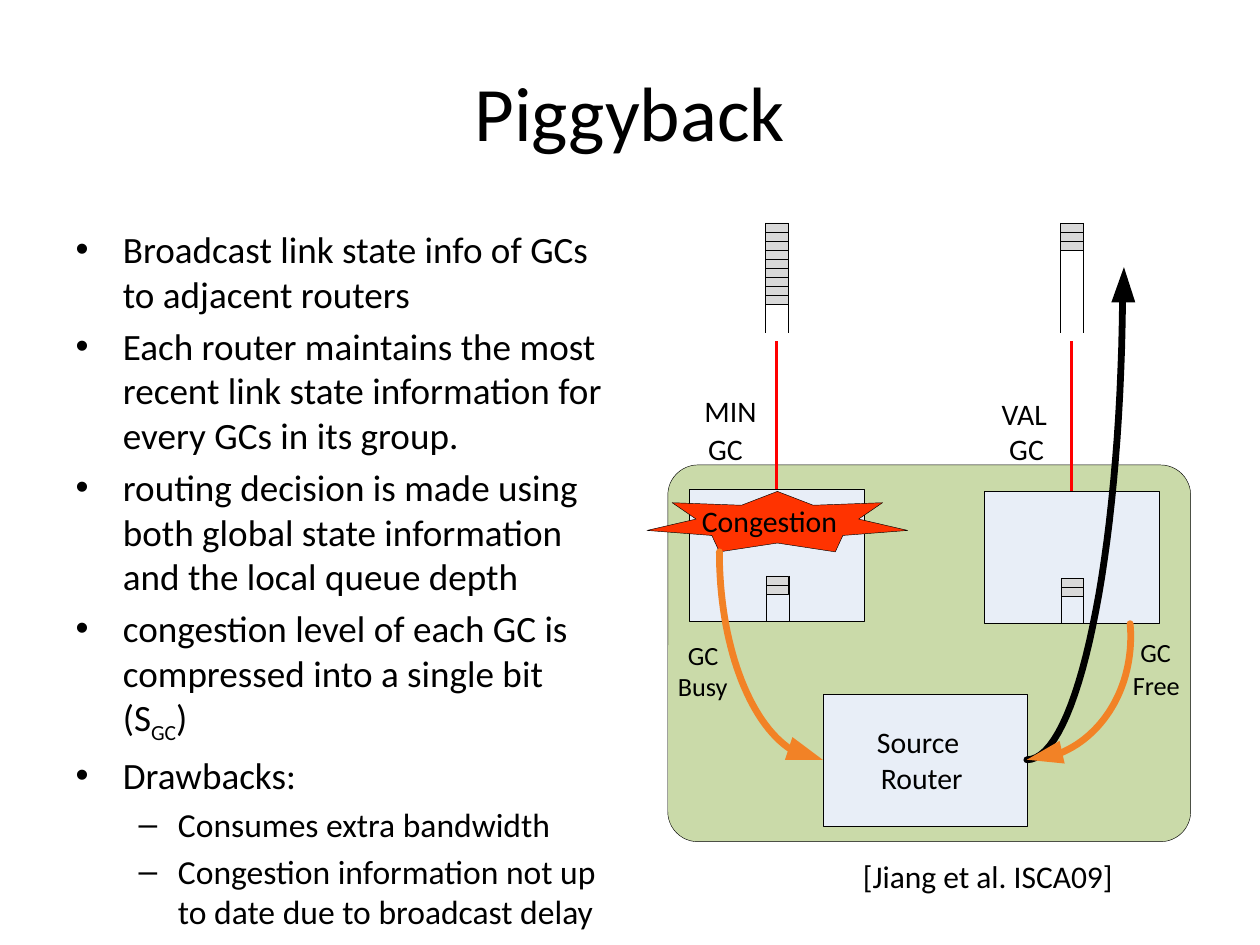
from dataclasses import dataclass

from lxml.etree import SubElement
from pptx import Presentation
from pptx.dml.color import RGBColor
from pptx.enum.shapes import MSO_CONNECTOR, MSO_SHAPE
from pptx.enum.text import MSO_ANCHOR, MSO_AUTO_SIZE, PP_ALIGN
from pptx.oxml.ns import qn
from pptx.util import Inches, Pt


@dataclass(frozen=True)
class Theme:
    font: str = "Calibri"
    ink: str = "000000"
    group: str = "CADAA9"
    router: str = "E8EEF7"
    queue: str = "D9D9D9"
    link: str = "FF0000"
    alert: str = "FF3300"
    signal: str = "F28226"
    title_size: float = 44
    body_size: float = 21.2
    sub_size: float = 19.2
    citation_size: float = 18
    label_size: float = 17
    signal_size: float = 15
    hairline: float = 0.25
    link_width: float = 1.5
    route_width: float = 3.88


def write(paragraph, text, size, color, font, baseline=0):
    run = paragraph.add_run()
    run.text = text
    run.font.name = font
    run.font.size = Pt(size)
    run.font.color.rgb = RGBColor.from_string(color)
    if baseline:
        run.font._element.set("baseline", str(baseline * 1000))


def bezier(start, control_1, control_2, end, steps=32):
    """Points along a cubic curve."""
    points = []
    for step in range(steps + 1):
        t = step / steps
        weights = ((1 - t) ** 3, 3 * t * (1 - t) ** 2, 3 * t * t * (1 - t), t ** 3)
        corners = (start, control_1, control_2, end)
        points.append(tuple(sum(w * corner[axis] for w, corner in zip(weights, corners))
                            for axis in (0, 1)))
    return points


class SlideBuilder:
    """Draws on one slide; lengths are cells of a 100 by 75 grid."""
    COLUMNS, ROWS = 100, 75

    def __init__(self, presentation, theme):
        self.theme = theme
        self.slide = presentation.slides.add_slide(presentation.slide_layouts[1])
        self.column = presentation.slide_width / self.COLUMNS
        self.row = presentation.slide_height / self.ROWS

    def place(self, column, row):
        return round(column * self.column), round(row * self.row)

    def style(self, shape, fill=None, line=None, width=None):
        shape.shadow.inherit = False
        if fill:
            shape.fill.solid()
            shape.fill.fore_color.rgb = RGBColor.from_string(fill)
        else:
            shape.fill.background()
        if line:
            shape.line.color.rgb = RGBColor.from_string(line)
            shape.line.width = Pt(width or self.theme.hairline)
        else:
            shape.line.fill.background()
        return shape

    def placeholder(self, index, left, top, width, height):
        shape = self.slide.placeholders[index]
        shape.left, shape.top = self.place(left, top)
        shape.width, shape.height = self.place(width, height)
        shape.text_frame.auto_size = MSO_AUTO_SIZE.NONE
        return shape.text_frame

    def title(self, text, *box):
        frame = self.placeholder(0, *box)
        frame.vertical_anchor = MSO_ANCHOR.MIDDLE
        frame.paragraphs[0].alignment = PP_ALIGN.CENTER
        write(frame.paragraphs[0], text, self.theme.title_size, self.theme.ink, self.theme.font)

    def bullets(self, items, *box):
        """Each item is a level and its (text, baseline) runs."""
        frame = self.placeholder(1, *box)
        for number, (level, runs) in enumerate(items):
            paragraph = frame.add_paragraph() if number else frame.paragraphs[0]
            paragraph.level = level
            size = self.theme.sub_size if level else self.theme.body_size
            for text, baseline in runs:
                write(paragraph, text, size, self.theme.ink, self.theme.font, baseline)

    def label(self, text, left, top, width, height, size, inset=0):
        shape = self.slide.shapes.add_textbox(*self.place(left, top), *self.place(width, height))
        frame = shape.text_frame
        frame.word_wrap = False
        frame.auto_size = MSO_AUTO_SIZE.SHAPE_TO_FIT_TEXT
        frame.margin_left = frame.margin_right = Inches(inset)
        frame.margin_top = frame.margin_bottom = Inches(inset / 2)
        write(frame.paragraphs[0], text, size, self.theme.ink, self.theme.font)

    def box(self, left, top, width, height, fill, preset=MSO_SHAPE.RECTANGLE):
        shape = self.slide.shapes.add_shape(preset, *self.place(left, top),
                                            *self.place(width, height))
        return self.style(shape, fill, self.theme.ink)

    def line(self, start, end, color=None, width=None):
        connector = self.slide.shapes.add_connector(
            MSO_CONNECTOR.STRAIGHT, *self.place(*start), *self.place(*end))
        connector.line.color.rgb = RGBColor.from_string(color or self.theme.ink)
        connector.line.width = Pt(width or self.theme.hairline)
        SubElement(connector._element.spPr, qn("a:effectLst"))
        return connector

    def outline(self, points, close=True, **look):
        placed = [self.place(*point) for point in points]
        builder = self.slide.shapes.build_freeform(*placed[0])
        builder.add_line_segments(placed[1:], close=close)
        return self.style(builder.convert_to_shape(), **look)

    def route(self, curve, head, color):
        """A thick curve with a solid triangular head."""
        shape = self.outline(bezier(*curve), close=False, line=color,
                             width=self.theme.route_width)
        shape.line._get_or_add_ln().set("cap", "rnd")
        self.outline(head, fill=color)

    def queue(self, left, top, slots, depth, width=1.8, slot=0.72):
        """An open-ended buffer with its used slots at the top."""
        right = left + width
        self.box(left, top, width, slots * slot, self.theme.queue)
        for side in (left, right):
            self.line((side, top), (side, top + depth))
        for number in range(1, slots):
            height = top + number * slot
            self.line((left, height), (right, height))


def main():
    presentation = Presentation()
    presentation.slide_width, presentation.slide_height = Inches(10), Inches(7.5)
    theme = Theme()
    builder = SlideBuilder(presentation, theme)

    # Title, list and citation
    builder.title("Piggyback", 5, 2.5, 90, 12.5)
    builder.bullets([
        (0, [("Broadcast link state info of GCs to adjacent routers", 0)]),
        (0, [("Each router maintains the most recent link state information "
              "for every GCs in its group.", 0)]),
        (0, [("routing decision is made using both global state information "
              "and the local queue depth", 0)]),
        (0, [("congestion level of each GC is compressed into a single bit (S", 0),
             ("GC", -25), (")", 0)]),
        (0, [("Drawbacks:", 0)]),
        (1, [("Consumes extra bandwidth", 0)]),
        (1, [("Congestion information not up to date due to broadcast delay", 0)]),
    ], 5, 17.5, 44.2, 49.5)
    builder.label("[Jiang et al. ISCA09]", 67.5, 67.5, 22.1, 4, theme.citation_size, inset=0.1)

    # Router group
    group = builder.box(53, 36.9, 41.5, 29.9, theme.group, MSO_SHAPE.ROUNDED_RECTANGLE)
    group.adjustments[0] = 0.08
    builder.box(65.3, 55.1, 16.2, 10.5, theme.router)

    # Routers with their global links and queues
    for left, top, slots in ((54.7, 38.8, 9), (78.1, 39, 3)):
        router = builder.box(left, top, 13.9, 10.5, theme.router)
        middle = left + 6.95
        link = builder.line((middle, 27.1), (middle, top), theme.link, theme.link_width)
        link.end_connect(router, 0)
        builder.queue(middle - 0.9, 17.7, slots, 8.7)

    # Chosen route
    builder.route(((81.5, 60.3), (85.5, 60.3), (88.9, 44.3), (89.1, 23.8)),
                  ((88.2, 24), (89.2, 21.2), (90.1, 24)), theme.ink)

    # Congestion burst, symmetrical about its centre
    center = 61.7
    half = [(0, 39), (2.85, 40.1), (8.35, 39.9), (6.45, 41.2), (10.35, 42.1),
            (5.2, 42.5), (4.6, 43.8), (0, 43.1)]
    burst = [(center + x, y) for x, y in half]
    burst += [(center - x, y) for x, y in half[-2:0:-1]]
    builder.outline(burst, fill=theme.alert, line=theme.ink)

    # Local queues
    for left, top in ((60.8, 45.7), (84.2, 45.9)):
        builder.queue(left, top, 2, 3.55)

    # Link state signals
    builder.route(((57.1, 43.8), (57.1, 51), (59.4, 57.3), (62.8, 59.5)),
                  ((62.9, 58.5), (65.3, 60.3), (62.3, 60.3)), theme.signal)
    builder.route(((89.7, 49.5), (90.1, 54.1), (87.8, 58.3), (84.1, 59.8)),
                  ((84.5, 60.6), (81.5, 60.3), (84.1, 58.8)), theme.signal)

    # Diagram labels
    for text, left, top, width in (
            ("Source", 69.6, 57.4, 6.6), ("Router", 69.9, 60.3, 6.5),
            ("Congestion", 55.7, 39.9, 10.8),
            ("MIN", 55.9, 31.2, 4.2), ("GC", 56.2, 34.2, 2.8),
            ("VAL", 79.5, 31.4, 3.7), ("GC", 80.1, 34.2, 2.8)):
        builder.label(text, left, top, width, 2.8, theme.label_size)
    for text, left, top, width in (
            ("GC", 54.6, 50.7, 2.5), ("Busy", 53.8, 53.2, 4),
            ("GC", 90.5, 50.5, 2.5), ("Free", 89.9, 53.1, 3.8)):
        builder.label(text, left, top, width, 2.5, theme.signal_size)

    presentation.save("out.pptx")


if __name__ == "__main__":
    main()
